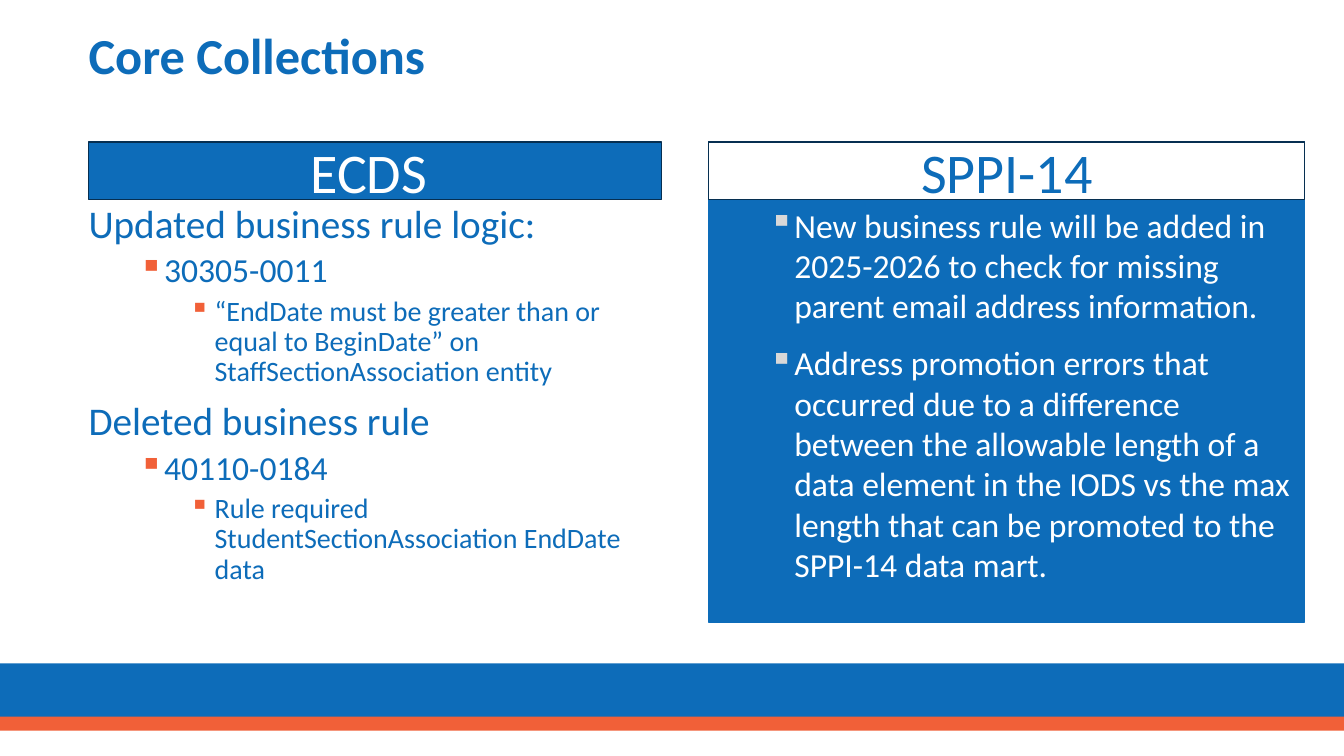
"""Build the Core Collections slide with its two topic panels."""
import lxml.etree
import pptx
import pptx.dml.color
import pptx.enum.shapes
import pptx.enum.text
import pptx.oxml.ns
import pptx.util

Inches = pptx.util.Inches
Pt = pptx.util.Pt
RGBColor = pptx.dml.color.RGBColor
qn = pptx.oxml.ns.qn

BLUE = RGBColor(0x0D, 0x6C, 0xB9)
ORANGE = RGBColor(0xF1, 0x60, 0x38)
NAVY = RGBColor(0x06, 0x2F, 0x51)
GREY = RGBColor(0xD8, 0xD8, 0xD8)
WHITE = RGBColor(0xFF, 0xFF, 0xFF)

MIDDLE = pptx.enum.text.MSO_ANCHOR.MIDDLE
LEFT_TEXT = [
    (0, "Updated business rule logic:"),
    (1, "30305-0011"),
    (2, "“EndDate must be greater than or equal to BeginDate” on StaffSectionAssociation entity"),
    (0, "Deleted business rule"),
    (1, "40110-0184"),
    (2, "Rule required StudentSectionAssociation EndDate data"),
]
RIGHT_TEXT = [
    (1, "New business rule will be added in 2025-2026 to check for missing parent email address information."),
    (1, "Address promotion errors that occurred due to a difference between the allowable length of a "
        "data element in the IODS vs the max length that can be promoted to the SPPI-14 data mart."),
]


def style_run(paragraph, size, color, bold=False):
    font = paragraph.runs[0].font
    font.name = "Calibri"
    font.size = Pt(size)
    font.bold = bold
    font.color.rgb = color


def add_bullet(paragraph, level, color):
    paragraph.level = level
    properties = paragraph._p.get_or_add_pPr()
    properties.set("marL", str(Inches(0.25 + 0.5 * level)))
    properties.set("indent", str(Inches(-0.25)))
    bullet_color = lxml.etree.SubElement(properties, qn("a:buClr"))
    lxml.etree.SubElement(bullet_color, qn("a:srgbClr")).set("val", str(color))
    lxml.etree.SubElement(properties, qn("a:buChar")).set("char", "▪")


presentation = pptx.Presentation()
presentation.slide_width = Inches(13.33)
presentation.slide_height = Inches(7.5)
slide = presentation.slides.add_slide(presentation.slide_layouts[6])

rectangles = [
    (0, 6.58, 13.33, 0.58, BLUE, None, None, None),
    (7.03, 1.41, 5.91, 4.76, BLUE, BLUE, None, None),
    (0, 7.11, 13.33, 0.14, ORANGE, None, None, None),
    (0.88, 1.41, 5.68, 0.57, BLUE, NAVY, "ECDS ", WHITE),
    (7.03, 1.41, 5.91, 0.57, WHITE, NAVY, "SPPI-14", BLUE),
]
for left, top, width, height, fill, line, heading, heading_color in rectangles:
    shape = slide.shapes.add_shape(
        pptx.enum.shapes.MSO_SHAPE.RECTANGLE, Inches(left), Inches(top), Inches(width), Inches(height))
    shape.shadow.inherit = False
    shape.fill.solid()
    shape.fill.fore_color.rgb = fill
    if line is None:
        shape.line.fill.background()
    else:
        shape.line.color.rgb = line
        shape.line.width = Pt(1)
    if heading:
        shape.text_frame.text = heading
        shape.text_frame.vertical_anchor = MIDDLE
        paragraph = shape.text_frame.paragraphs[0]
        paragraph.alignment = pptx.enum.text.PP_ALIGN.CENTER
        style_run(paragraph, 40, heading_color)

title = slide.shapes.add_textbox(Inches(0.78), Inches(0.17), Inches(12.16), Inches(0.82))
title.text_frame.word_wrap = True
title.text_frame.vertical_anchor = MIDDLE
title.text_frame.text = "Core Collections"
title.text_frame.paragraphs[0].line_spacing = 0.9
style_run(title.text_frame.paragraphs[0], 36, BLUE, bold=True)

columns = [
    (0.78, LEFT_TEXT, BLUE, ORANGE, 0.9, (10, 5, 5), 0),
    (7.03, RIGHT_TEXT, WHITE, GREY, 1.0, (6, 6, 6), 6),
]
for left, entries, color, bullet_color, line_spacing, space_before, space_after in columns:
    body = slide.shapes.add_textbox(Inches(left), Inches(1.98), Inches(5.89), Inches(4.19))
    body.text_frame.word_wrap = True
    body.text_frame.text = "\n".join(text for level, text in entries)
    for index, paragraph in enumerate(body.text_frame.paragraphs):
        level = entries[index][0]
        if level:
            add_bullet(paragraph, level, bullet_color)
        paragraph.line_spacing = line_spacing
        paragraph.space_before = Pt(space_before[level] if index else 0)
        paragraph.space_after = Pt(space_after)
        style_run(paragraph, 28 - 4 * level, color)

presentation.save("out.pptx")
